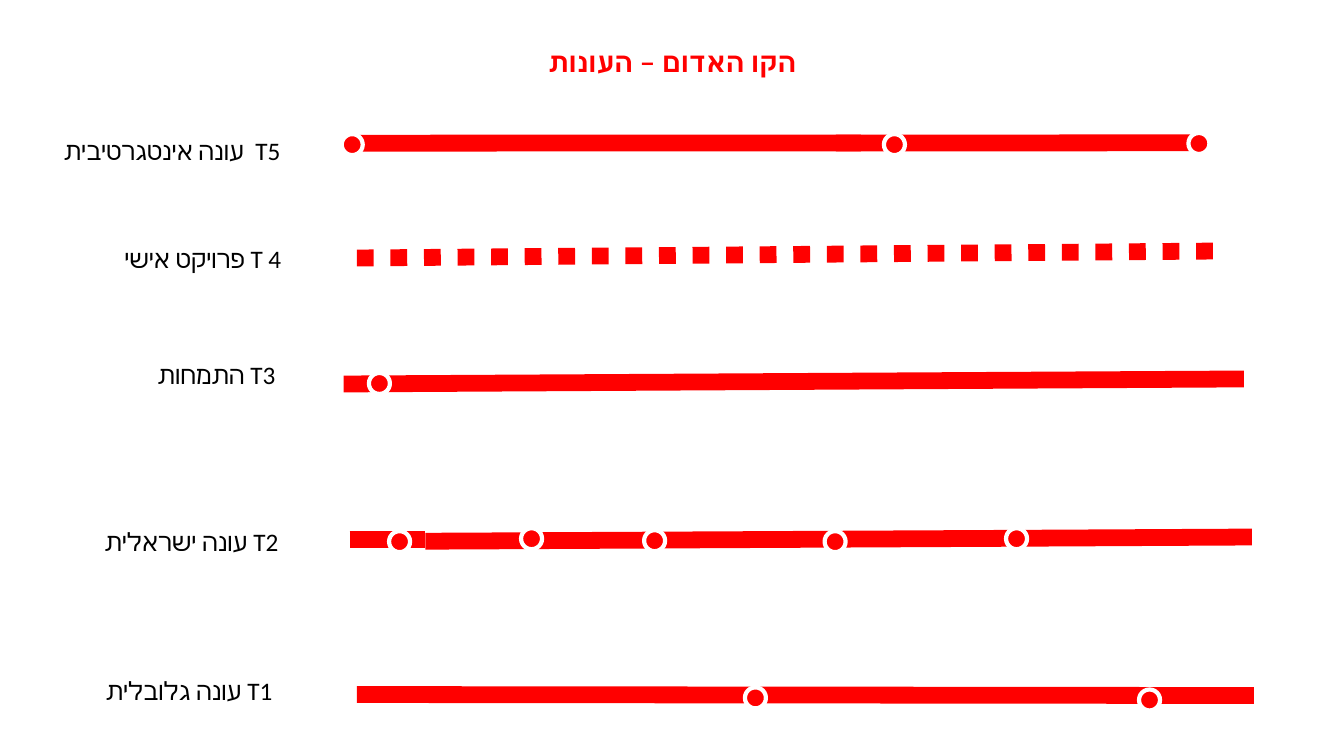
from lxml import etree
from pptx import Presentation
from pptx import util as u
from pptx.dml.color import RGBColor
from pptx.enum import dml, shapes, text
from pptx.oxml.ns import qn

RED, WHITE, BLACK = "FF0000", "FFFFFF", "000000"
DOT = 15


def color(value):
    return RGBColor.from_string(value)


def add_text(box, words, fmt, align, font_color):
    sp = slide.shapes.add_textbox(*map(u.Pt, box))
    tf = sp.text_frame
    tf.word_wrap = True
    p = tf.paragraphs[0]
    p.alignment = align
    r = p.add_run()
    r.text = words
    for name, value in fmt.items():
        setattr(r.font, name, value)
    r.font.color.rgb = color(font_color)
    # Hebrew letters take the complex-script font
    etree.SubElement(r.font._element, qn("a:cs"), typeface=fmt["name"])
    return tf


prs = Presentation()
prs.slide_width, prs.slide_height = u.Pt(960), u.Pt(540)
slide = prs.slides.add_slide(prs.slide_layouts[6])

# Seasons: label box (left, top, width), line segments, dot corners
seasons = [
    ("T5  עונה אינטגרטיבית", (38.2, 92.9, 169.2),
     [(255, 102.3, 615, 102.1), (855.4, 102, 597, 102.2)],
     [(244.1, 95.8), (631.4, 95.8), (848.9, 95)]),
    ("T 4 פרויקט אישי", (77, 169.9, 131),
     [(254.9, 184.3, 870.5, 179.3)], []),
    ("T3 התמחות", (102.2, 253.4, 101.5),
     [(245.5, 274.3, 888.5, 270.7)], [(263.5, 266.4)]),
    ("T2 עונה ישראלית", (50.4, 372.2, 155.5),
     [(249.8, 385.2, 303.8, 385.2), (303.8, 386.6, 725, 384.5),
      (725, 384.5, 894.2, 383.6)],
     [(277.9, 379.4), (372.2, 377.3), (460.1, 378.7), (589, 379.4),
      (718.6, 377.3)]),
    ("T1 עונה גלובלית", (64.1, 478.8, 137.5),
     [(254.9, 496.1, 895.7, 496.8)], [(532.1, 491), (813.6, 492.5)]),
]

for label, box, segments, dots in seasons:
    # Line
    for ends in segments:
        sp = slide.shapes.add_connector(shapes.MSO_CONNECTOR.STRAIGHT, *map(u.Pt, ends))
        sp.line.color.rgb = color(RED)
        sp.line.width = u.Pt(12)
        if label.startswith("T 4"):
            sp.line.dash_style = dml.MSO_LINE.ROUND_DOT
        etree.SubElement(sp._element.spPr, qn("a:effectLst"))

    # Stations
    for left, top in dots:
        sp = slide.shapes.add_shape(shapes.MSO_SHAPE.OVAL, *map(u.Pt, (left, top, DOT, DOT)))
        sp.shadow.inherit = False
        sp.fill.solid()
        sp.fill.fore_color.rgb = color(RED)
        sp.line.color.rgb = color(WHITE)
        sp.line.width = u.Pt(3)

    # Label
    tf = add_text((*box, 29), label, {"name": "Calibri", "size": u.Pt(18)},
                  text.PP_ALIGN.RIGHT, BLACK)
    tf.auto_size = text.MSO_AUTO_SIZE.SHAPE_TO_FIT_TEXT
    tf.paragraphs[0]._p.get_or_add_pPr().set("rtl", "1")

# Title
tf = add_text((66.2, 28.8, 828, 29.5), "הקו האדום – העונות",
              {"name": "Lato", "size": u.Pt(19.5), "bold": True},
              text.PP_ALIGN.CENTER, RED)
tf.vertical_anchor = text.MSO_ANCHOR.BOTTOM
tf.paragraphs[0].line_spacing = 0.7

prs.save("out.pptx")
